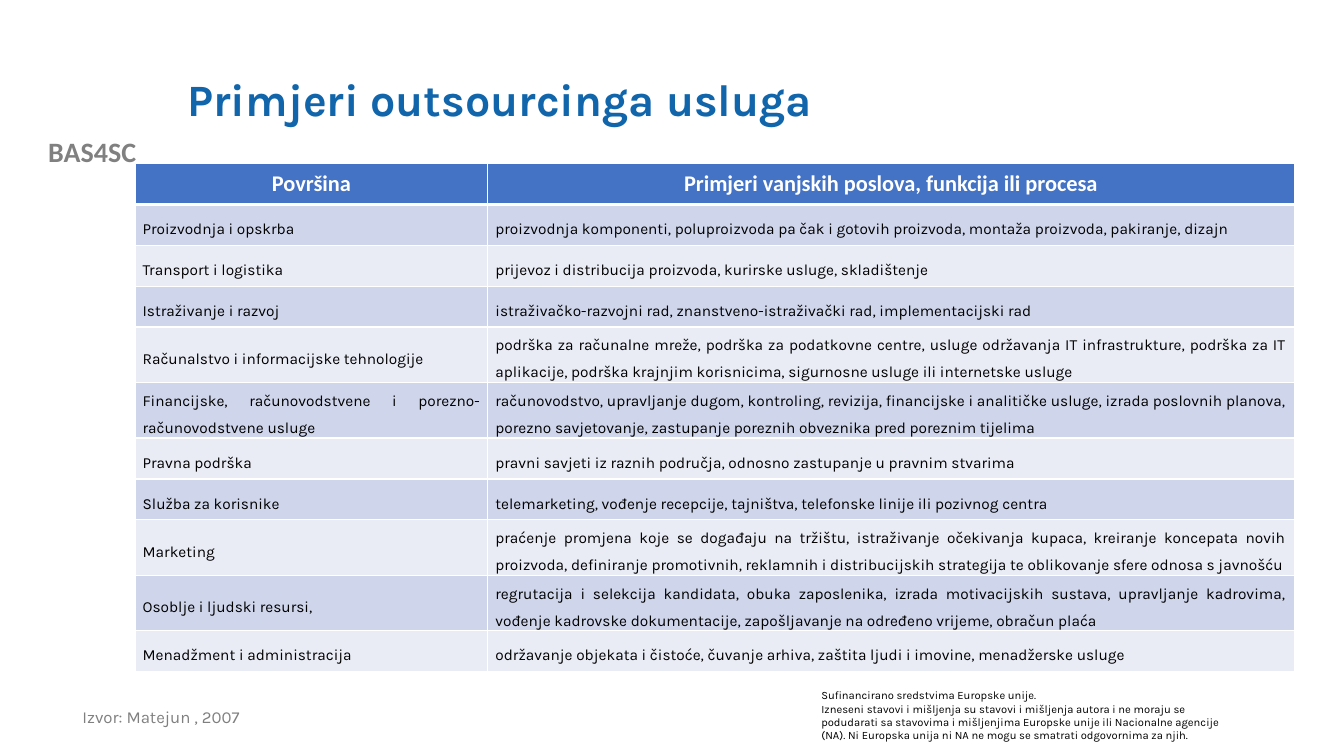
"""Build a slide with a table of outsourced services by business area."""
from dataclasses import dataclass, field
from typing import Any, NamedTuple

import pptx
import pptx.dml.color
import pptx.enum.text
import pptx.oxml
import pptx.oxml.ns
import pptx.util

Pt = pptx.util.Pt
ALIGN = pptx.enum.text.PP_ALIGN
ANCHOR = pptx.enum.text.MSO_ANCHOR
FIT = pptx.enum.text.MSO_AUTO_SIZE


class TextStyle(NamedTuple):
    font: str
    size: float
    color: str
    bold: bool = False


@dataclass(frozen=True)
class Theme:
    title: TextStyle = TextStyle("Karla", 32, "1065AB", True)
    project: TextStyle = TextStyle("Calibri", 20, "808080", True)
    source: TextStyle = TextStyle("Karla", 12, "7F7F7F")
    funding: TextStyle = TextStyle("Karla", 8, "000000")
    header: TextStyle = TextStyle("Calibri", 16, "FFFFFF", True)
    body: TextStyle = TextStyle("Karla", 11, "000000")
    header_fill: str = "4472C4"
    bands: tuple[str, str] = ("CFD5EA", "E9EBF5")
    border: str = "FFFFFF"


@dataclass(frozen=True)
class Label:
    box: tuple[float, float, float, float]
    paragraphs: list[str]
    style: TextStyle
    frame: dict[str, Any] = field(default_factory=dict)
    layout: dict[str, Any] = field(default_factory=dict)


class Service(NamedTuple):
    area: str
    examples: str


THEME = Theme()
LABELS = [
    Label((0, 92.2, 131.8, 31.7), ["BAS4SC"], THEME.project,
          {"auto_size": FIT.SHAPE_TO_FIT_TEXT}, {"alignment": ALIGN.CENTER}),
    Label((579.6, 488.2, 314.6, 46.1),
          ["Sufinancirano sredstvima Europske unije.",
           "Izneseni stavovi i mišljenja su stavovi i mišljenja autora i ne moraju se "
           "podudarati sa stavovima i mišljenjima Europske unije ili Nacionalne agencije "
           "(NA). Ni Europska unija ni NA ne mogu se smatrati odgovornima za njih."],
          THEME.funding, {"auto_size": FIT.SHAPE_TO_FIT_TEXT}),
    Label((126.7, 28.8, 767.5, 87.8), ["Primjeri outsourcinga usluga"], THEME.title,
          {"vertical_anchor": ANCHOR.MIDDLE}, {"line_spacing": 0.9}),
    Label((51.8, 502.6, 360.7, 37.4), ["Izvor: Matejun , 2007"], THEME.source,
          {}, {"line_spacing": 0.9}),
]
HEADER = Service("Površina", "Primjeri vanjskih poslova, funkcija ili procesa")
SERVICES = [
    Service("Proizvodnja i opskrba",
            "proizvodnja komponenti, poluproizvoda pa čak i gotovih proizvoda, "
            "montaža proizvoda, pakiranje, dizajn"),
    Service("Transport i logistika",
            "prijevoz i distribucija proizvoda, kurirske usluge, skladištenje"),
    Service("Istraživanje i razvoj",
            "istraživačko-razvojni rad, znanstveno-istraživački rad, implementacijski rad"),
    Service("Računalstvo i informacijske tehnologije",
            "podrška za računalne mreže, podrška za podatkovne centre, usluge održavanja "
            "IT infrastrukture, podrška za IT aplikacije, podrška krajnjim korisnicima, "
            "sigurnosne usluge ili internetske usluge"),
    Service("Financijske, računovodstvene i porezno-računovodstvene usluge",
            "računovodstvo, upravljanje dugom, kontroling, revizija, financijske i "
            "analitičke usluge, izrada poslovnih planova, porezno savjetovanje, "
            "zastupanje poreznih obveznika pred poreznim tijelima"),
    Service("Pravna podrška",
            "pravni savjeti iz raznih područja, odnosno zastupanje u pravnim stvarima"),
    Service("Služba za korisnike",
            "telemarketing, vođenje recepcije, tajništva, telefonske linije ili "
            "pozivnog centra"),
    Service("Marketing",
            "praćenje promjena koje se događaju na tržištu, istraživanje očekivanja "
            "kupaca, kreiranje koncepata novih proizvoda, definiranje promotivnih, "
            "reklamnih i distribucijskih strategija te oblikovanje sfere odnosa s javnošću"),
    Service("Osoblje i ljudski resursi,",
            "regrutacija i selekcija kandidata, obuka zaposlenika, izrada motivacijskih "
            "sustava, upravljanje kadrovima, vođenje kadrovske dokumentacije, "
            "zapošljavanje na određeno vrijeme, obračun plaća"),
    Service("Menadžment i administracija",
            "održavanje objekata i čistoće, čuvanje arhiva, zaštita ljudi i imovine, "
            "menadžerske usluge"),
]
TABLE_LEFT, TABLE_TOP = 96.5, 116.8
COLUMN_WIDTHS = (252, 576)
ROW_HEIGHT = 29.2
HEADER_LAYOUT = {"alignment": ALIGN.CENTER}
BODY_LAYOUT = {"alignment": ALIGN.JUSTIFY, "line_spacing": 1.5, "space_after": Pt(6)}
HEADER_CELL = {"vertical_anchor": ANCHOR.MIDDLE}
BODY_CELL = HEADER_CELL | {"margin_left": Pt(5.4), "margin_right": Pt(5.4),
                           "margin_top": 0, "margin_bottom": 0}


def rgb(color: str) -> pptx.dml.color.RGBColor:
    """Turn a hex string into a colour."""
    return pptx.dml.color.RGBColor.from_string(color)


def apply(target: Any, values: dict[str, Any]) -> None:
    """Set each named attribute on the target."""
    for name, value in values.items():
        setattr(target, name, value)


def write(tf: Any, paragraphs: list[str], style: TextStyle, layout: dict[str, Any]) -> None:
    """Fill a text frame with equally styled paragraphs."""
    for i, text in enumerate(paragraphs):
        p = tf.add_paragraph() if i else tf.paragraphs[0]
        apply(p, layout)
        r = p.add_run()
        r.text = text
        apply(r.font, {"name": style.font, "size": Pt(style.size), "bold": style.bold})
        r.font.color.rgb = rgb(style.color)


def add_label(s: Any, label: Label) -> None:
    """Add one wrapped text box."""
    tf = s.shapes.add_textbox(*map(Pt, label.box)).text_frame
    apply(tf, {"word_wrap": True} | label.frame)
    write(tf, label.paragraphs, label.style, label.layout)


def add_borders(cell: Any, top: float, bottom: float) -> None:
    """Outline a cell with solid lines."""
    tc_pr = cell._tc.get_or_add_tcPr()
    for side, width in {"L": 1, "R": 1, "T": top, "B": bottom}.items():
        tc_pr.append(pptx.oxml.parse_xml(
            f'<a:ln{side} {pptx.oxml.ns.nsdecls("a")} w="{Pt(width)}">'
            f'<a:solidFill><a:srgbClr val="{THEME.border}"/></a:solidFill></a:ln{side}>'))


def add_services(s: Any) -> None:
    """Add the banded services table."""
    rows = [HEADER, *SERVICES]
    table = s.shapes.add_table(
        len(rows), len(COLUMN_WIDTHS), Pt(TABLE_LEFT), Pt(TABLE_TOP),
        Pt(sum(COLUMN_WIDTHS)), Pt(ROW_HEIGHT * len(rows))).table
    for column, width in zip(table.columns, COLUMN_WIDTHS):
        column.width = Pt(width)
    for i, service in enumerate(rows):
        table.rows[i].height = Pt(ROW_HEIGHT)
        is_header = i == 0
        fill = THEME.header_fill if is_header else THEME.bands[(i - 1) % 2]
        for j, text in enumerate(service):
            cell = table.cell(i, j)
            add_borders(cell, 3 if i == 1 else 1, 3 if is_header else 1)
            cell.fill.solid()
            cell.fill.fore_color.rgb = rgb(fill)
            apply(cell, HEADER_CELL if is_header else BODY_CELL)
            write(cell.text_frame, [text], THEME.header if is_header else THEME.body,
                  HEADER_LAYOUT if is_header else BODY_LAYOUT)


def main() -> None:
    """Build and save the presentation."""
    prs = pptx.Presentation()
    apply(prs, {"slide_width": Pt(960), "slide_height": Pt(540)})
    s = prs.slides.add_slide(prs.slide_layouts[6])
    for label in LABELS:
        add_label(s, label)
    add_services(s)
    prs.save("out.pptx")


if __name__ == "__main__":
    main()
